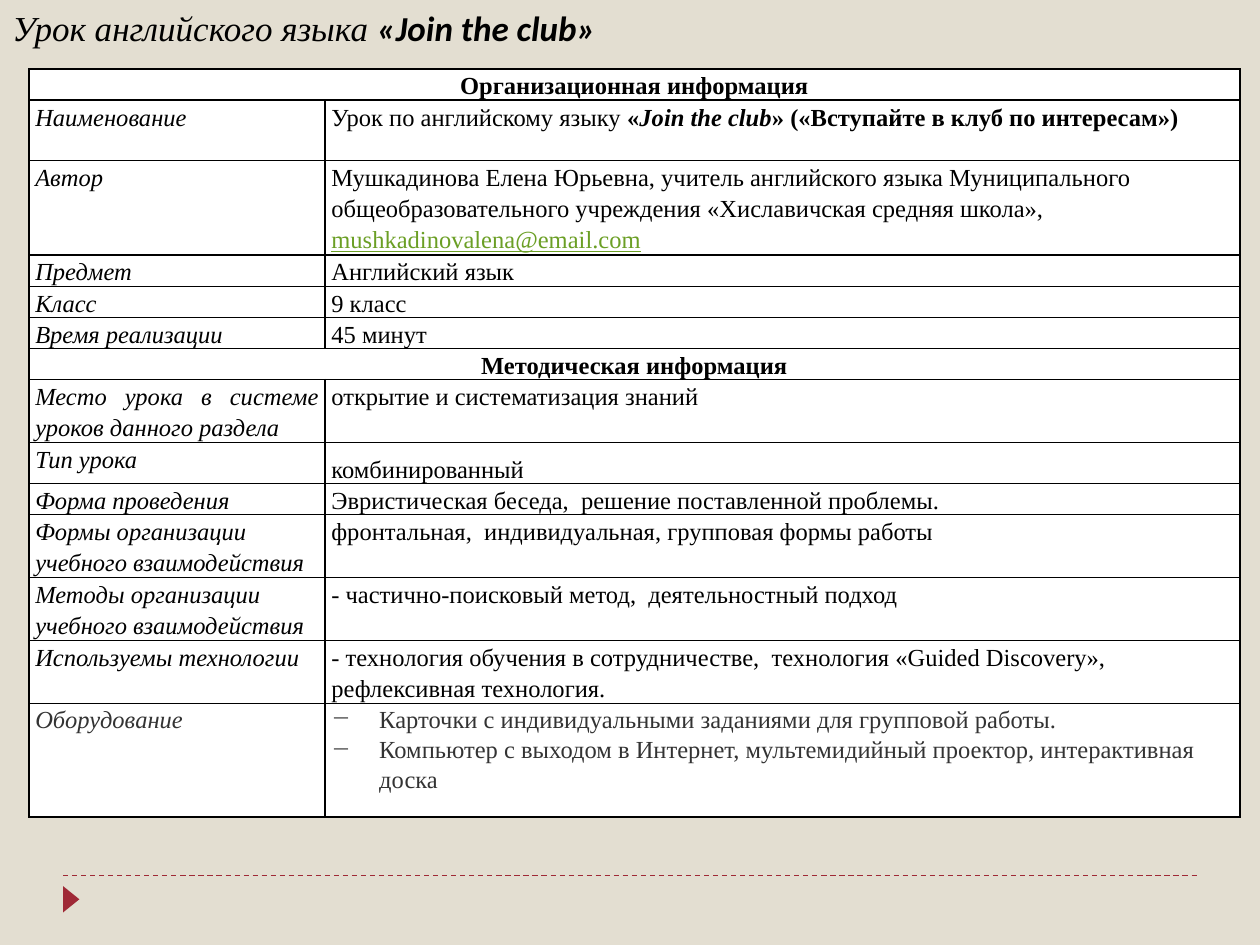
"""Build the lesson passport slide: a title, an information table and a footer rule."""
from dataclasses import dataclass, replace

from lxml import etree
from pptx import Presentation
from pptx.dml.color import RGBColor
from pptx.enum.dml import MSO_LINE
from pptx.enum.shapes import MSO_CONNECTOR, MSO_SHAPE
from pptx.enum.text import MSO_ANCHOR, MSO_AUTO_SIZE, PP_ALIGN
from pptx.oxml.ns import qn
from pptx.util import Emu, Inches, Pt

CENTER, JUSTIFY, LEFT = PP_ALIGN.CENTER, PP_ALIGN.JUSTIFY, PP_ALIGN.LEFT
DASH = MSO_LINE.DASH
MIDDLE = MSO_ANCHOR.MIDDLE
FIT_SHAPE = MSO_AUTO_SIZE.SHAPE_TO_FIT_TEXT
STRAIGHT = MSO_CONNECTOR.STRAIGHT
TRIANGLE = MSO_SHAPE.ISOSCELES_TRIANGLE

SLIDE_WIDTH, SLIDE_HEIGHT = Inches(10), Inches(7.5)
BACKGROUND, ACCENT, PAPER = "E3DED1", "9F2936", "FFFFFF"
INK, SOFT_INK, LINK = "000000", "333333", "6B9F25"
SERIF, SANS = "Times New Roman", "Calibri"
COLUMN_SHARES = (0.235, 0.726)
CELL_INSET, BULLET_INDENT = Inches(0.05), Inches(0.38)
LINE, TWO_LINES = 0.24, 0.5


@dataclass(frozen=True)
class Span:
    """A stretch of text in one style."""
    text: str
    bold: bool = False
    italic: bool = False
    underline: bool = False
    color: str = INK
    size: float = 14
    font: str = SERIF


@dataclass(frozen=True)
class Para:
    """A paragraph of spans with its alignment and spacing."""
    spans: tuple[Span, ...]
    align: PP_ALIGN = LEFT
    spacing: float | Pt = 1.15
    after: float = 0
    bullet: str = ""


@dataclass(frozen=True)
class Row:
    """A table row; a row without details is a section heading."""
    height: float
    label: Para
    details: tuple[Para, ...] = ()


def plain(text: str, **layout) -> Para:
    """Return a paragraph of upright text."""
    return Para((Span(text),), **layout)


def label(text: str, **layout) -> Para:
    """Return a paragraph of italic text."""
    return Para((Span(text, italic=True),), **layout)


def section(text: str) -> Row:
    """Return a heading row that spans the table."""
    return Row(LINE, Para((Span(text, bold=True),), CENTER))


def equipment(text: str, **layout) -> Para:
    """Return a softer paragraph with fixed line spacing."""
    italic = layout.pop("italic", False)
    span = replace(Span(text, italic=italic), color=SOFT_INK)
    return Para((span,), spacing=Pt(17.2), **layout)


LESSON_NAME = Para((
    Span("Урок по английскому языку "),
    Span("«", bold=True),
    Span("Join the club", bold=True, italic=True),
    Span("» («Вступайте в клуб по интересам»)", bold=True),
))
AUTHOR = Para((
    Span("Мушкадинова Елена Юрьевна, учитель английского языка Муниципального "
         "общеобразовательного учреждения «Хиславичская средняя школа», "),
    Span("mushkadinovalena@email.com", underline=True, color=LINK),
))
ROWS = (
    section("Организационная информация"),
    Row(2 * LINE, label("Наименование"), (LESSON_NAME,)),
    Row(0.75, label("Автор"), (AUTHOR,)),
    Row(LINE, label("Предмет"), (plain("Английский язык", align=JUSTIFY),)),
    Row(LINE, label("Класс"), (plain("9 класс", align=JUSTIFY),)),
    Row(LINE, label("Время реализации"), (plain("45 минут"),)),
    section("Методическая информация"),
    Row(TWO_LINES, label("Место урока в системе уроков данного раздела", align=JUSTIFY),
        (plain("открытие и систематизация знаний", align=JUSTIFY),)),
    Row(0.3, label("Тип урока"), (plain("комбинированный", spacing=1.5),)),
    Row(LINE, label("Форма проведения"),
        (plain("Эвристическая беседа,  решение поставленной проблемы."),)),
    Row(TWO_LINES, label("Формы организации учебного взаимодействия"),
        (plain("фронтальная,  индивидуальная, групповая формы работы"),)),
    Row(TWO_LINES, label("Методы организации учебного взаимодействия"),
        (plain("- частично-поисковый метод,  деятельностный подход"),)),
    Row(TWO_LINES, label("Используемы технологии"),
        (plain("- технология обучения в сотрудничестве,  технология "
               "«Guided Discovery», рефлексивная технология."),)),
    Row(0.9, equipment("Оборудование", italic=True, after=8.6), (
        equipment("Карточки с индивидуальными заданиями для групповой работы.", bullet="−"),
        equipment("Компьютер с выходом в Интернет, мультемидийный проектор, "
                  "интерактивная доска", bullet="−"),
    )),
)
TITLE = Para((
    Span("Урок английского языка ", italic=True, size=20),
    Span("«Join the club»", bold=True, italic=True, size=20, font=SANS),
), spacing=1.0)


def rgb(value: str) -> RGBColor:
    """Turn a hex string into a colour."""
    return RGBColor.from_string(value)


def across(share: float) -> Emu:
    """Return a share of the slide width."""
    return Emu(round(SLIDE_WIDTH * share))


def down(share: float) -> Emu:
    """Return a share of the slide height."""
    return Emu(round(SLIDE_HEIGHT * share))


def write(frame, paras: tuple[Para, ...]) -> None:
    """Write paragraphs into a text frame."""
    for index, para in enumerate(paras):
        paragraph = frame.add_paragraph() if index else frame.paragraphs[0]
        paragraph.alignment = para.align
        paragraph.line_spacing = para.spacing
        paragraph.space_after = Pt(para.after)
        if para.bullet:
            properties = paragraph._p.get_or_add_pPr()
            properties.set("marL", str(BULLET_INDENT))
            properties.set("indent", str(-BULLET_INDENT))
            etree.SubElement(properties, qn("a:buChar"), char=para.bullet)
        for span in para.spans:
            run = paragraph.add_run()
            run.text = span.text
            font = run.font
            font.name, font.size = span.font, Pt(span.size)
            font.bold, font.italic, font.underline = span.bold, span.italic, span.underline
            font.color.rgb = rgb(span.color)


def draw_borders(cell) -> None:
    """Draw a thin line on every side of a cell."""
    properties = cell._tc.get_or_add_tcPr()
    for index, side in enumerate(("a:lnL", "a:lnR", "a:lnT", "a:lnB")):
        border = etree.Element(qn(side), w=str(Pt(1)))
        fill = etree.SubElement(border, qn("a:solidFill"))
        etree.SubElement(fill, qn("a:srgbClr"), val=INK)
        properties.insert(index, border)


def draw_table(slide, rows: tuple[Row, ...]) -> None:
    """Draw the lesson information table."""
    height = Inches(sum(row.height for row in rows))
    table = slide.shapes.add_table(len(rows), len(COLUMN_SHARES), across(0.023), down(0.073),
                                   across(sum(COLUMN_SHARES)), height).table
    table.first_row = table.horz_banding = False
    for column, share in zip(table.columns, COLUMN_SHARES):
        column.width = across(share)
    for table_row, row in zip(table.rows, rows):
        table_row.height = Inches(row.height)
        name_cell, detail_cell = table_row.cells
        for cell in (name_cell, detail_cell):
            cell.margin_left = cell.margin_right = CELL_INSET
            cell.margin_top = cell.margin_bottom = 0
            cell.fill.solid()
            cell.fill.fore_color.rgb = rgb(PAPER)
            draw_borders(cell)
        write(name_cell.text_frame, (row.label,))
        if row.details:
            write(detail_cell.text_frame, row.details)
        else:
            name_cell.merge(detail_cell)


def draw_footer(slide) -> None:
    """Draw the dashed rule and the marker below it."""
    rule = slide.shapes.add_connector(STRAIGHT, across(0.05), down(0.9267),
                                      across(0.95), down(0.9267))
    rule.line.color.rgb, rule.line.width = rgb(ACCENT), Pt(0.75)
    rule.line.dash_style = DASH
    etree.SubElement(rule._element.spPr, qn("a:effectLst"))
    marker = slide.shapes.add_shape(TRIANGLE, across(0.046), down(0.943),
                                    across(0.021), down(0.0173))
    marker.rotation = 90
    marker.shadow.inherit = False
    marker.fill.solid()
    marker.fill.fore_color.rgb = rgb(ACCENT)
    marker.line.fill.background()


def draw_title(slide) -> None:
    """Draw the lesson title across the top."""
    frame = slide.shapes.add_textbox(0, 0, across(0.977), down(0.0587)).text_frame
    frame.word_wrap = True
    frame.auto_size = FIT_SHAPE
    frame.vertical_anchor = MIDDLE
    write(frame, (TITLE,))


def main() -> None:
    """Build and save the slide."""
    deck = Presentation()
    deck.slide_width, deck.slide_height = SLIDE_WIDTH, SLIDE_HEIGHT
    slide = deck.slides.add_slide(deck.slide_layouts[6])
    slide.background.fill.solid()
    slide.background.fill.fore_color.rgb = rgb(BACKGROUND)
    draw_footer(slide)
    draw_table(slide, ROWS)
    draw_title(slide)
    deck.save("out.pptx")


if __name__ == "__main__":
    main()
